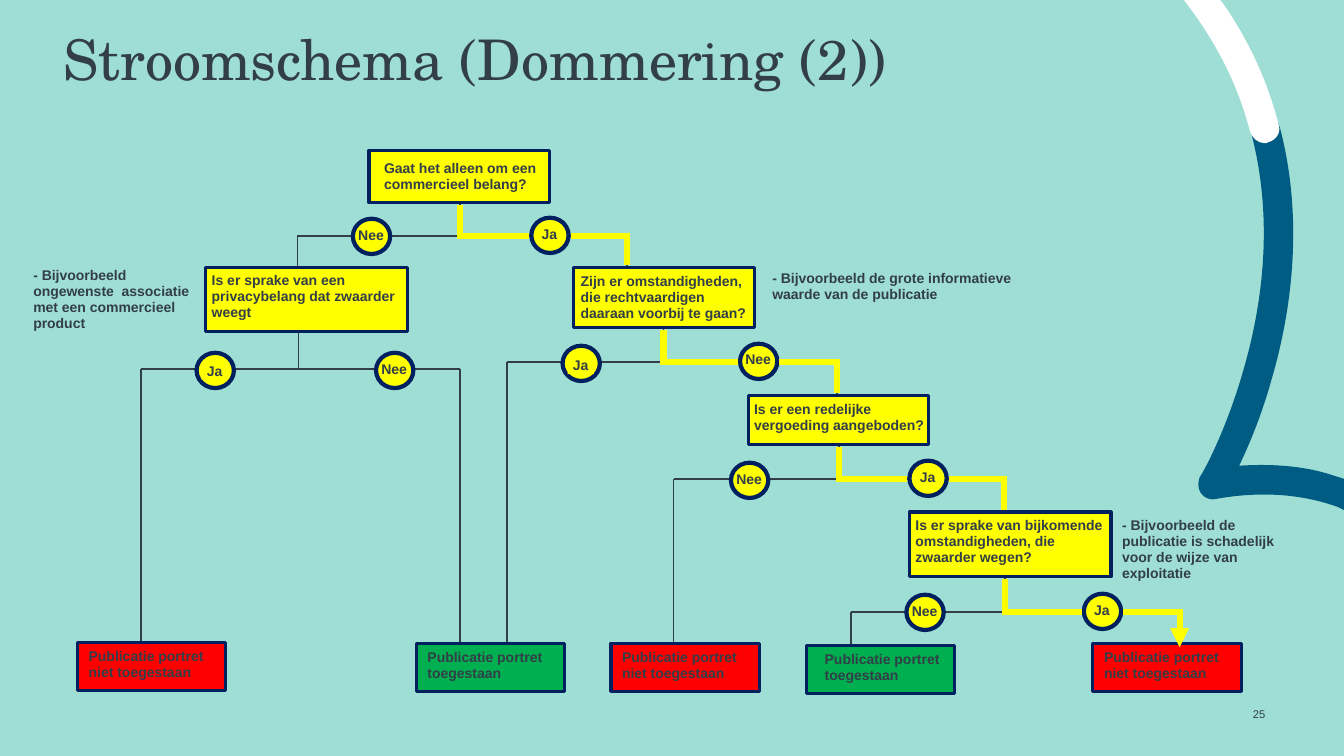
from collections import namedtuple

from lxml.etree import SubElement
from pptx import Presentation
from pptx.dml.color import RGBColor
from pptx.enum.shapes import MSO_CONNECTOR as Connector, MSO_SHAPE as Preset
from pptx.enum.text import MSO_ANCHOR as Anchor, MSO_AUTO_SIZE as AutoSize, PP_ALIGN as Align
from pptx.oxml.ns import qn
from pptx.util import Emu, Inches, Pt

CELL = Inches(0.1)
COLUMNS, ROWS = 133.3, 75
LINE_ROWS = 1.6
COLORS = {
    "background": "9EDED4", "text": "323E48", "border": "002060", "yellow": "FFFF00",
    "red": "FF0000", "green": "00B050", "blue": "005C82", "white": "FFFFFF",
}
Box = namedtuple("Box", "left top width height")
Label = namedtuple("Label", "indent drop width lines")
Answer = namedtuple("Answer", "text left top drop plate", defaults=(0.9, False))
Split = namedtuple("Split", "question trunk level ends targets answers")

ALLOWED, FORBIDDEN = "Publicatie portret toegestaan", "Publicatie portret niet toegestaan"
NODES = {
    "commercial": (Box(36.6, 14.9, 17.9, 5.2), "yellow", Label(1.5, 1, 15.3, 2),
                   "Gaat het alleen om een commercieel belang?"),
    "privacy": (Box(20.4, 26.5, 20, 6.4), "yellow", Label(0.6, 0.6, 18.9, 3),
                "Is er sprake van een privacybelang dat zwaarder weegt"),
    "justified": (Box(56.9, 26.5, 17.9, 6), "yellow", Label(0.7, 0.7, 17.3, 3),
                  "Zijn er omstandigheden, die rechtvaardigen daaraan voorbij te gaan?"),
    "fee": (Box(74.2, 39.2, 17.9, 4.9), "yellow", Label(0.6, 0.7, 17.3, 2),
            "Is er een redelijke vergoeding aangeboden?"),
    "additional": (Box(90.2, 50.8, 20, 6.4), "yellow", Label(0.6, 0.6, 18.9, 3),
                   "Is er sprake van bijkomende omstandigheden, die zwaarder wegen?"),
    "private": (Box(7.7, 63.7, 14.7, 4.8), "red", Label(1.1, 0.7, 12.6, 2), FORBIDDEN),
    "free": (Box(41.3, 63.8, 14.7, 4.8), "green", Label(1.1, 0.7, 14.7, 2), ALLOWED),
    "unpaid": (Box(60.6, 63.8, 14.7, 4.8), "red", Label(1.1, 0.7, 12.6, 2), FORBIDDEN),
    "paid": (Box(80, 64, 14.7, 4.8), "green", Label(1.8, 0.7, 14.7, 2), ALLOWED),
    "harmful": (Box(108.4, 63.8, 14.7, 4.8), "red", Label(1.1, 0.7, 12.6, 2), FORBIDDEN),
}
SIDE_SPLIT = Split("privacy", 29.6, 36.6, (14, 45.6), ("private", "free"),
                   (Answer("Ja", 19.5, 35, 1.1, True), Answer("Nee", 37.3, 35)))
# The right-hand answer carries the main route on to the next question
MAIN_SPLITS = [
    Split("commercial", 45.6, 23.4, (29.5, 62.2), ("privacy", "justified"),
          (Answer("Nee", 35, 21.7), Answer("Ja", 52.7, 21.6))),
    Split("justified", 65.8, 35.9, (50.3, 83), ("free", "fee"),
          (Answer("Ja", 55.8, 34.3, 1.2, True), Answer("Nee", 73.4, 34.1, 0.8))),
    Split("fee", 83.2, 47.5, (66.8, 99.6), ("unpaid", "additional"),
          (Answer("Nee", 72.5, 45.9), Answer("Ja", 90.2, 45.7))),
    Split("additional", 99.7, 60.7, (84.4, 117), ("paid", "harmful"),
          (Answer("Nee", 89.9, 59), Answer("Ja", 107.5, 58.9, 0.9, True))),
]
NOTES = [
    (Box(3.3, 26.6, 16.5, 6.4), "- Bijvoorbeeld ongewenste  associatie met een commercieel product"),
    (Box(76.6, 26.9, 26.1, 3.2), "- Bijvoorbeeld de grote informatieve waarde van de publicatie"),
    (Box(111.3, 51.4, 16.3, 6.4),
     "- Bijvoorbeeld de publicatie is schadelijk voor de wijze van exploitatie"),
]
# Points in cells from the corner of the box: pairs are lines, sixes are curves
BLUE_RIBBON = [
    (6.9, 0), (7.5, 0.1, 7.9, 0.5, 8.1, 1.1), (10.7, 10.8, 9.1, 20.2, 7.3, 26.3),
    (6.5, 29.2, 5.4, 32.1, 4.1, 34.8), (7.2, 34.6, 10.3, 34.8, 12.9, 35.6), (14.5, 36.1),
    (14.5, 39.2), (13.9, 38.9), (10.3, 37.6, 6.2, 37.3, 1.8, 38.1), (1, 38.3, 0.2, 37.7, 0.1, 37),
    (0, 36.6, 0.1, 36.2, 0.2, 35.9), (0.3, 35.9, 2.7, 31.7, 4.5, 25.4),
    (6.2, 19.6, 7.7, 10.9, 5.3, 1.8), (5.1, 1.1, 5.5, 0.3, 6.3, 0.1), (6.5, 0, 6.7, 0, 6.9, 0),
]
WHITE_RIBBON = [
    (0, 0), (3.6, 0), (3.8, 0.2), (6.4, 3.9, 8.3, 8, 9.4, 12.3), (9.7, 13.1, 9.2, 13.9, 8.4, 14.1),
    (8.3, 14.2, 8.2, 14.2, 8, 14.2), (7.4, 14.2, 6.8, 13.7, 6.6, 13.1),
    (5.4, 8.4, 3.2, 4.1, 0.1, 0.1), (0, 0),
]


def cells(*values):
    return [Emu(round(value * CELL)) for value in values]


def color(name):
    return RGBColor.from_string(COLORS[name])


def paint(shape, fill):
    shape.shadow.inherit = False
    shape.fill.solid()
    shape.fill.fore_color.rgb = color(fill)
    shape.line.fill.background()


def write(shape, text, size=10, bold=True, font="Arial", align=Align.LEFT,
          anchor=Anchor.TOP, spacing=0.95, before=8, wrap=True):
    frame = shape.text_frame
    frame.auto_size, frame.word_wrap, frame.vertical_anchor = AutoSize.NONE, wrap, anchor
    frame.margin_left = frame.margin_top = frame.margin_right = frame.margin_bottom = 0
    paragraph = frame.paragraphs[0]
    paragraph.alignment, paragraph.line_spacing = align, spacing
    paragraph.space_before = Pt(before)
    run = paragraph.add_run()
    run.text = text
    run.font.name, run.font.size, run.font.bold = font, Pt(size), bold
    run.font.color.rgb = color("text")


def add_text(slide, box, text, **style):
    write(slide.shapes.add_textbox(*cells(*box)), text, **style)


def add_shape(slide, preset, box, fill, border=0):
    shape = slide.shapes.add_shape(preset, *cells(*box))
    paint(shape, fill)
    if border:
        shape.line.color.rgb, shape.line.width = color("border"), Pt(border)
    return shape


def add_line(slide, start, end, main=False, arrow=False):
    connector = slide.shapes.add_connector(Connector.STRAIGHT, *cells(*start, *end))
    connector.line.color.rgb = color("yellow" if main else "text")
    connector.line.width = Pt(4.5 if main else 1.25)
    properties = connector._element.spPr
    SubElement(properties, qn("a:effectLst"))
    if arrow:
        SubElement(properties.find(qn("a:ln")), qn("a:tailEnd"), type="triangle")


def add_ribbon(slide, box, points, fill):
    """Draw a closed outline through the points, then bend the curved parts."""
    ends = [cells(box.left + point[-2], box.top + point[-1]) for point in points]
    builder = slide.shapes.build_freeform(*ends[0], scale=1.0)
    builder.add_line_segments(ends[1:], close=True)
    shape = builder.convert_to_shape()
    paint(shape, fill)
    segments = list(shape._element.iter(qn("a:lnTo")))
    for segment, point in zip(segments, points[1:]):
        if len(point) == 2:
            continue
        curve = segment.makeelement(qn("a:cubicBezTo"))
        for column, row in zip(point[::2], point[1::2]):
            x, y = cells(box.left + column, box.top + row)
            SubElement(curve, qn("a:pt"), x=str(x - shape.left), y=str(y - shape.top))
        segment.getparent().replace(segment, curve)


def add_node(slide, box, fill, label, text):
    add_shape(slide, Preset.RECTANGLE, box, fill, 2.25)
    place = Box(box.left + label.indent, box.top + label.drop, label.width, label.lines * LINE_ROWS)
    add_text(slide, place, text)


def add_answer(slide, answer):
    add_shape(slide, Preset.OVAL, Box(answer.left, answer.top, 3.7, 3.5), "yellow", 3)
    place = Box(answer.left + 0.5, answer.top + answer.drop, 2.6, LINE_ROWS)
    if answer.plate:
        write(add_shape(slide, Preset.RECTANGLE, place, "yellow"), answer.text,
              align=Align.CENTER, wrap=False)
    else:
        add_text(slide, place, answer.text, align=Align.CENTER)


def add_split(slide, box, split):
    """Lead both answers of the question in the box to their targets."""
    left, right = split.ends
    add_line(slide, (split.trunk, box.top + box.height), (split.trunk, split.level))
    add_line(slide, (left, split.level), (right, split.level))
    for end, target in zip(split.ends, split.targets):
        add_line(slide, (end, split.level), (end, NODES[target][0].top))
    for answer in split.answers:
        add_answer(slide, answer)


def add_main_route(slide, box, split):
    overlap, gap, end, level = 0.3, 0.2, split.ends[1], split.level
    circle = split.answers[1].left
    target = NODES[split.targets[1]][0]
    arrow = split.targets[1] == "harmful"
    add_line(slide, (split.trunk, box.top + box.height + 0.2), (split.trunk, level + 0.1), True)
    add_line(slide, (circle - gap, level), (split.trunk - overlap, level), True)
    add_line(slide, (end + overlap, level), (circle + 3.7 + gap, level), True)
    stop = target.top + (0.4 if arrow else -0.2)
    add_line(slide, (end, level - overlap), (end, stop), True, arrow)


def add_flowchart(slide):
    for split in [SIDE_SPLIT, *MAIN_SPLITS]:
        add_split(slide, NODES[split.question][0], split)
    for node in NODES.values():
        add_node(slide, *node)
    for split in MAIN_SPLITS:
        add_main_route(slide, NODES[split.question][0], split)
    for box, text in NOTES:
        add_text(slide, box, text)


def add_title(slide, box, text):
    title = slide.shapes.title
    title.left, title.top, title.width, title.height = cells(*box)
    write(title, text, size=40, bold=False, font="TeX Gyre Schola", spacing=0.9, before=0)


def main():
    presentation = Presentation()
    presentation.slide_width, presentation.slide_height = cells(COLUMNS, ROWS)
    slide = presentation.slides.add_slide(presentation.slide_layouts[5])
    slide.background.fill.solid()
    slide.background.fill.fore_color.rgb = color("background")
    add_ribbon(slide, Box(118.8, 11.4, 14.5, 39.2), BLUE_RIBBON, "blue")
    add_ribbon(slide, Box(117.4, 0, 9.5, 14.2), WHITE_RIBBON, "white")
    add_title(slide, Box(6.3, 3.2, 117.6, 7.9), "Stroomschema (Dommering (2))")
    add_flowchart(slide)
    add_text(slide, Box(123.5, 69.9, 2, 1.6), "25", size=8, bold=False,
             align=Align.RIGHT, anchor=Anchor.BOTTOM)
    presentation.save("out.pptx")


if __name__ == "__main__":
    main()
